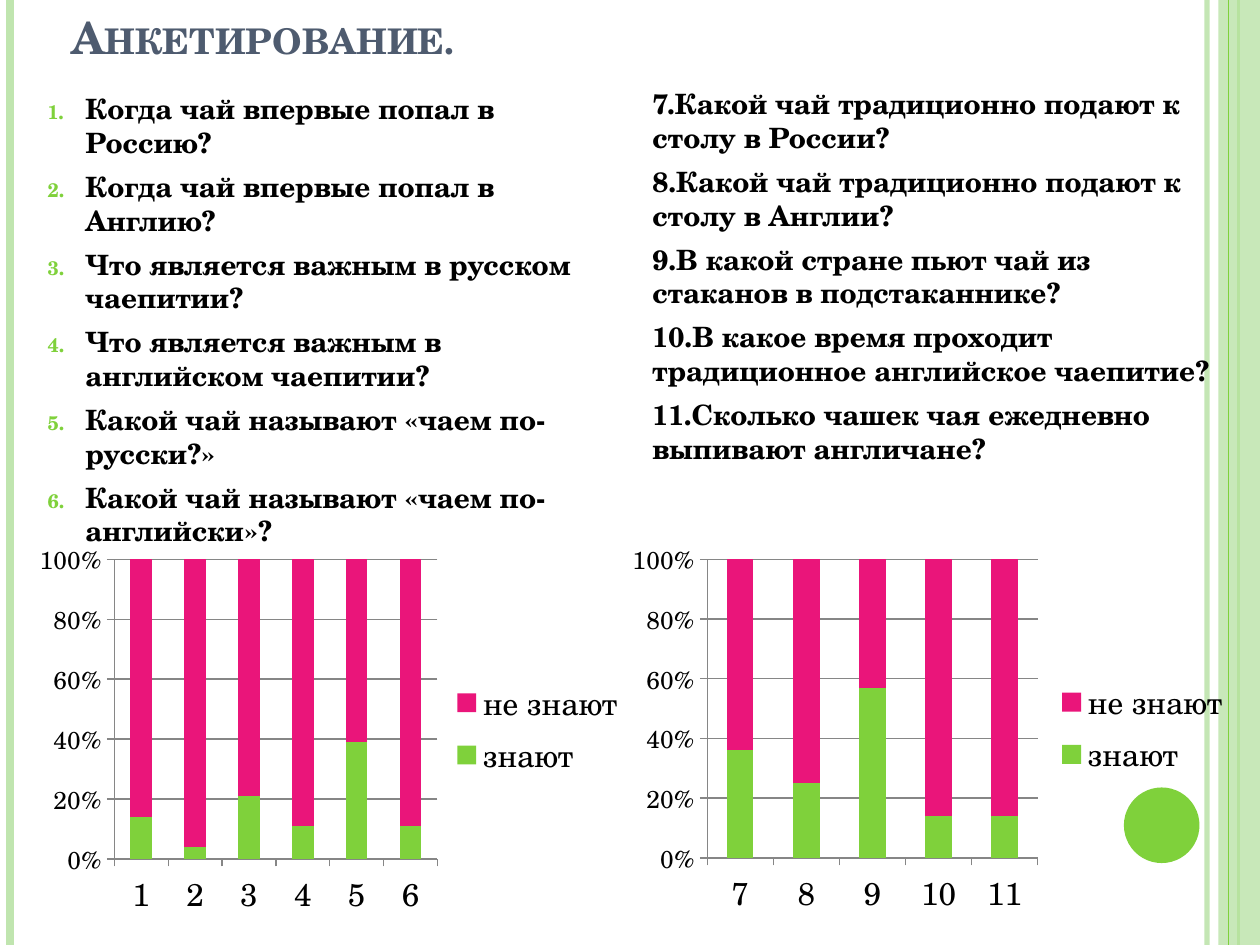
from lxml.etree import SubElement
from pptx import Presentation
from pptx.chart.data import CategoryChartData
from pptx.dml.color import RGBColor
from pptx.enum.chart import XL_CHART_TYPE, XL_LEGEND_POSITION, XL_TICK_MARK
from pptx.enum.shapes import MSO_CONNECTOR, MSO_SHAPE
from pptx.enum.text import MSO_ANCHOR
from pptx.oxml.ns import qn
from pptx.util import Inches, Pt

FONT = "TeX Gyre Schola"
GREEN = RGBColor(0x7F, 0xD1, 0x3B)
PALE_GREEN = RGBColor(0xC0, 0xE5, 0xAF)
PINK = RGBColor(0xEA, 0x15, 0x7A)
SLATE = RGBColor(0x4E, 0x5B, 0x6F)
GREY = RGBColor(0x86, 0x86, 0x86)
BLACK = RGBColor(0, 0, 0)

SLIDE_WIDTH, SLIDE_HEIGHT = 10, 7.5
PLOT_LAYOUT = {"x": 0.14, "y": 0.07, "w": 0.53, "h": 0.76}

NUMBERED_QUESTIONS = [
    "Когда чай впервые попал в Россию?",
    "Когда чай впервые попал в Англию?",
    "Что является важным в русском чаепитии?",
    "Что является важным в английском чаепитии?",
    "Какой чай называют «чаем по-русски?»",
    "Какой чай называют «чаем по-английски»?",
]
OTHER_QUESTIONS = [
    "7.Какой чай традиционно подают к столу в России?",
    "8.Какой чай традиционно подают к столу в Англии?",
    "9.В какой стране пьют чай из стаканов в подстаканнике?",
    "10.В какое время проходит традиционное английское чаепитие?",
    "11.Сколько чашек чая ежедневно выпивают англичане?",
]
KNOW_FIRST = [14, 4, 21, 11, 39, 11]
KNOW_SECOND = [36, 25, 57, 14, 14]


def set_format(target, values):
    for name, value in values.items():
        setattr(target, name, value)


def set_opacity(fill_element, percent):
    color = next(fill_element.iter(qn("a:srgbClr")))
    SubElement(color, qn("a:alpha"), val=str(percent * 1000))


def add_stripe(slide, x, color, width, opacity=100):
    line = slide.shapes.add_connector(
        MSO_CONNECTOR.STRAIGHT, Inches(x), 0, Inches(x), Inches(SLIDE_HEIGHT))
    line.line.color.rgb = color
    line.line.width = Pt(width)
    if opacity < 100:
        set_opacity(line._element.spPr, opacity)
    SubElement(line._element.spPr, qn("a:effectLst"))


def add_plain_shape(slide, kind, box, color):
    shape = slide.shapes.add_shape(kind, *map(Inches, box))
    shape.shadow.inherit = False
    shape.fill.solid()
    shape.fill.fore_color.rgb = color
    shape.line.fill.background()
    return shape


def add_decoration(slide):
    add_stripe(slide, 9.58, PALE_GREEN, 3, 93)
    add_stripe(slide, 0.08, PALE_GREEN, 4.5)
    add_stripe(slide, 9.83, GREEN, 1.5)
    band = add_plain_shape(
        slide, MSO_SHAPE.RECTANGLE, (9.67, 0, SLIDE_WIDTH - 9.67, SLIDE_HEIGHT), PALE_GREEN)
    set_opacity(band._element.spPr, 87)
    add_stripe(slide, 9.75, GREEN, 0.75)
    add_plain_shape(slide, MSO_SHAPE.OVAL, (8.92, 6.25, 0.6, 0.6), GREEN)


def add_text_frame(slide, box):
    frame = slide.shapes.add_textbox(*map(Inches, box)).text_frame
    frame.word_wrap = True
    return frame


def add_bold_run(paragraph, text, size, color):
    run = paragraph.add_run()
    run.text = text
    set_format(run.font, {"name": FONT, "size": Pt(size), "bold": True})
    run.font.color.rgb = color
    return run


def add_title(slide, box, text):
    frame = add_text_frame(slide, box)
    frame.vertical_anchor = MSO_ANCHOR.BOTTOM
    run = add_bold_run(frame.paragraphs[0], text, 25.2, SLATE)
    run._r.get_or_add_rPr().set("cap", "small")


def add_number(paragraph):
    """Give the paragraph a small green automatic number with a hanging indent."""
    properties = paragraph._p.get_or_add_pPr()
    properties.set("marL", str(Inches(0.3)))
    properties.set("indent", str(-Inches(0.3)))
    color = SubElement(properties, qn("a:buClr"))
    SubElement(color, qn("a:srgbClr"), val=str(GREEN))
    SubElement(properties, qn("a:buSzPct"), val="70000")
    SubElement(properties, qn("a:buFont"), typeface="+mj-lt")
    SubElement(properties, qn("a:buAutoNum"), type="arabicPeriod")


def add_questions(slide, box, questions, numbered=False):
    frame = add_text_frame(slide, box)
    for index, question in enumerate(questions):
        paragraph = frame.paragraphs[0] if index == 0 else frame.add_paragraph()
        paragraph.space_before = Pt(6)
        if numbered:
            add_number(paragraph)
        add_bold_run(paragraph, question, 16, BLACK)


def set_plot_layout(chart):
    plot_area = chart._chartSpace.chart.plotArea
    for old_layout in plot_area.findall(qn("c:layout")):
        plot_area.remove(old_layout)
    layout = SubElement(plot_area, qn("c:layout"))
    plot_area.insert(0, layout)
    manual = SubElement(layout, qn("c:manualLayout"))
    SubElement(manual, qn("c:layoutTarget"), val="inner")
    for side in "xy":
        SubElement(manual, qn(f"c:{side}Mode"), val="edge")
    for side, share in PLOT_LAYOUT.items():
        SubElement(manual, qn(f"c:{side}"), val=str(share))


def style_axes(chart):
    for axis, size in ((chart.category_axis, 18), (chart.value_axis, 14)):
        set_format(axis, {"major_tick_mark": XL_TICK_MARK.OUTSIDE,
                          "minor_tick_mark": XL_TICK_MARK.NONE})
        axis.tick_labels.font.size = Pt(size)
        axis.format.line.color.rgb = GREY
    value_axis = chart.value_axis
    set_format(value_axis, {"minimum_scale": 0, "maximum_scale": 1, "major_unit": 0.2,
                            "has_major_gridlines": True})
    value_axis.major_gridlines.format.line.color.rgb = GREY
    set_format(value_axis.tick_labels, {"number_format": "0%", "number_format_is_linked": False})


def add_answer_chart(slide, box, first_question, know):
    data = CategoryChartData()
    data.categories = [str(first_question + index) for index in range(len(know))]
    data.add_series("знают", know)
    data.add_series("не знают", [100 - share for share in know])
    chart = slide.shapes.add_chart(
        XL_CHART_TYPE.COLUMN_STACKED_100, *map(Inches, box), data).chart
    set_format(chart.font, {"name": FONT, "size": Pt(18)})
    chart.font.color.rgb = BLACK
    set_format(chart, {"has_title": False, "has_legend": True})
    set_format(chart.legend, {"position": XL_LEGEND_POSITION.RIGHT, "include_in_layout": False})
    plot = chart.plots[0]
    set_format(plot, {"gap_width": 150, "overlap": 100, "vary_by_categories": False})
    for series, color in zip(plot.series, (GREEN, PINK)):
        series.format.fill.solid()
        series.format.fill.fore_color.rgb = color
    style_axes(chart)
    set_plot_layout(chart)


def main():
    presentation = Presentation()
    set_format(presentation, {"slide_width": Inches(SLIDE_WIDTH),
                              "slide_height": Inches(SLIDE_HEIGHT)})
    slide = presentation.slides.add_slide(presentation.slide_layouts[6])
    add_decoration(slide)
    add_title(slide, (0.47, 0, 9.03, 0.55), "Анкетирование.")
    add_questions(slide, (0.28, 0.68, 4.76, 6.56), NUMBERED_QUESTIONS, numbered=True)
    add_questions(slide, (5.08, 0.64, 4.68, 6.55), OTHER_QUESTIONS)
    add_answer_chart(slide, (4.92, 4.22, 4.95, 3.12), 7, KNOW_SECOND)
    add_answer_chart(slide, (0.23, 4.22, 4.84, 3.13), 1, KNOW_FIRST)
    presentation.save("out.pptx")


if __name__ == "__main__":
    main()
